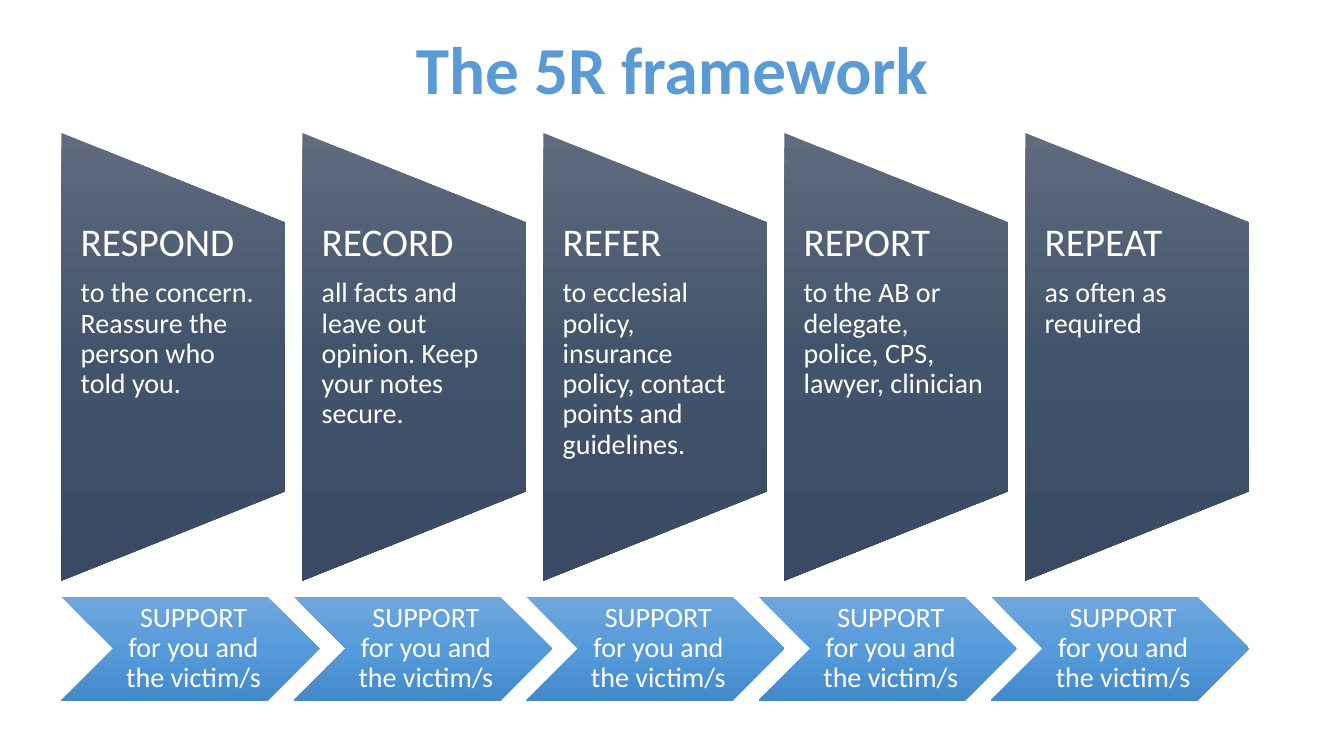
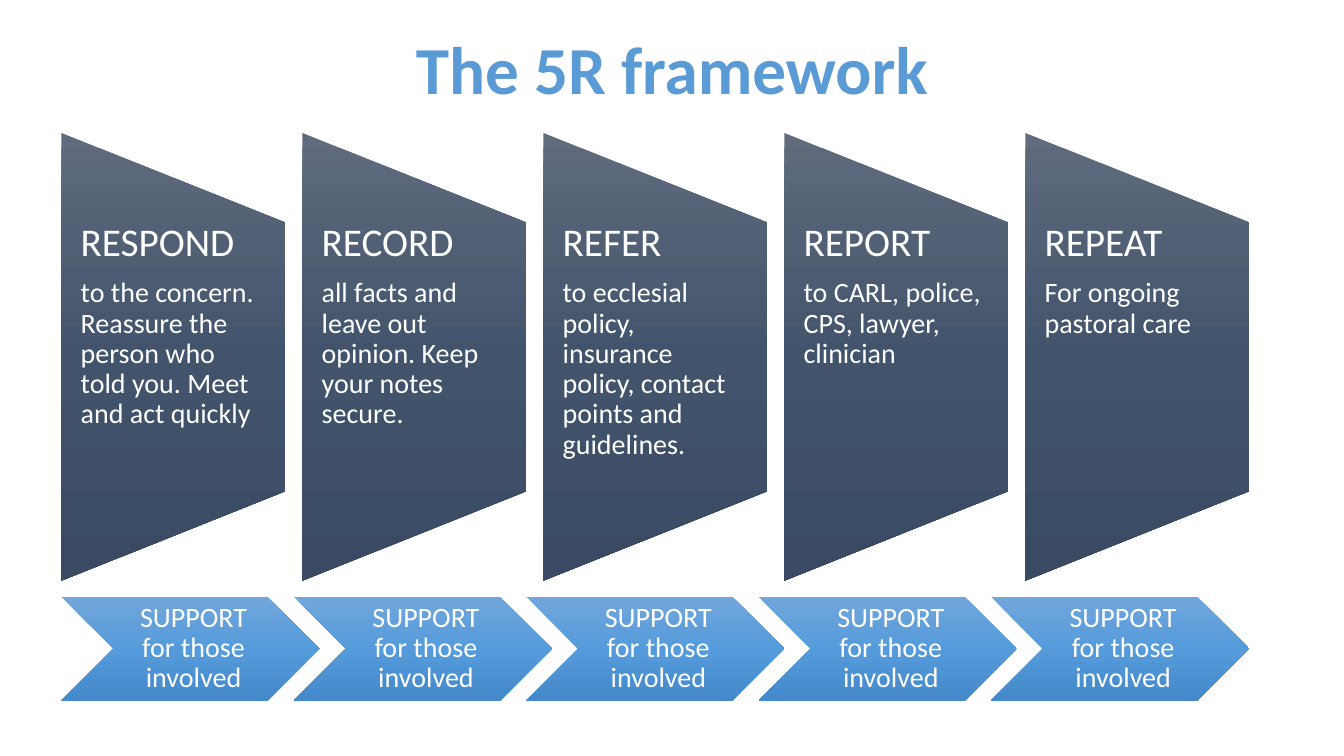
from lxml import etree
from pptx import Presentation
from pptx import util as u
from pptx.dml.color import RGBColor
from pptx.enum import shapes, text
from pptx.oxml.ns import qn


def color(value):
    return RGBColor.from_string(value)


class Deck:
    FONT = "Calibri"
    TITLE = "5B9BD5"
    TEXT = "FFFFFF"
    PANEL = ("606B7D", "42546C", "394A62")
    SUPPORT = ("71A6DB", "559BDB", "448ACA")
    LEFT = 0.61

    def __init__(self):
        self.prs = Presentation()
        self.prs.slide_width = u.Inches(13.33)
        self.prs.slide_height = u.Inches(7.5)
        self.slide = None

    def add_slide(self):
        self.slide = self.prs.slides.add_slide(self.prs.slide_layouts[6])

    def gradient(self, shape, stops):
        fill = shape.fill
        fill.gradient()
        grad = shape._element.spPr.find(qn("a:gradFill"))
        grad.set("rotWithShape", "0")
        stop_list = grad.find(qn("a:gsLst"))
        for old in list(stop_list):
            stop_list.remove(old)
        for i, value in enumerate(stops):
            stop = etree.SubElement(stop_list, qn("a:gs"), pos=str(i * 50000))
            etree.SubElement(stop, qn("a:srgbClr"), val=value)
        direction = grad.find(qn("a:lin"))
        direction.set("ang", "5400000")
        direction.set("scaled", "0")

    def shape(self, preset, left, top, width, height, stops):
        shape = self.slide.shapes.add_shape(
            preset, u.Inches(left), u.Inches(top), u.Inches(width), u.Inches(height))
        shape.shadow.inherit = False
        shape.line.fill.background()
        self.gradient(shape, stops)
        return shape

    def textbox(self, left, top, width, height):
        return self.slide.shapes.add_textbox(
            u.Inches(left), u.Inches(top), u.Inches(width), u.Inches(height)).text_frame

    def frame(self, frame, insets, anchor):
        frame.word_wrap = True
        frame.vertical_anchor = anchor
        (frame.margin_left, frame.margin_top,
         frame.margin_right, frame.margin_bottom) = map(u.Inches, insets)

    def run(self, paragraph, words, size, value, bold=False):
        run = paragraph.add_run()
        run.text = words
        run.font.name = self.FONT
        run.font.size = u.Pt(size)
        run.font.bold = bold
        run.font.color.rgb = color(value)

    def body_spacing(self, paragraph, align):
        paragraph.alignment = align
        paragraph.line_spacing = 0.9
        paragraph.space_after = u.Pt(7)
        after = paragraph._p.pPr.find(qn("a:spcAft"))
        after.remove(after[0])
        etree.SubElement(after, qn("a:spcPct"), val="35000")

    def title(self, words):
        frame = self.textbox(4, 0.17, 5.33, 0.97)
        frame.word_wrap = False
        frame.auto_size = text.MSO_AUTO_SIZE.SHAPE_TO_FIT_TEXT
        heading = frame.paragraphs[0]
        heading.alignment = text.PP_ALIGN.CENTER
        heading.line_spacing = 1.07
        heading.space_after = u.Pt(8)
        self.run(heading, words, 48, self.TITLE, bold=True)

    def panel(self, index, step, advice):
        width, height, top = 2.22, 4.44, 1.32
        left = self.LEFT + index * 2.39
        panel = self.shape(
            shapes.MSO_SHAPE.FLOWCHART_MANUAL_OPERATION,
            left + (width - height) / 2, top + (height - width) / 2,
            height, width, self.PANEL)
        panel.rotation = 270
        frame = self.textbox(left, 2.21, width, 2.67)
        self.frame(frame, (0.19, 0, 0.19, 0), text.MSO_ANCHOR.TOP)
        for paragraph, words, size in (
                (frame.paragraphs[0], step, 28), (frame.add_paragraph(), advice, 20)):
            self.body_spacing(paragraph, text.PP_ALIGN.LEFT)
            self.run(paragraph, words, size, self.TEXT)

    def support(self, index, audience):
        chevron = self.shape(
            shapes.MSO_SHAPE.CHEVRON, self.LEFT + index * 2.305, 5.92, 2.56, 1.03,
            self.SUPPORT)
        frame = chevron.text_frame
        self.frame(frame, (0.09, 0.03, 0.03, 0.03), text.MSO_ANCHOR.MIDDLE)
        paragraph = frame.paragraphs[0]
        self.body_spacing(paragraph, text.PP_ALIGN.CENTER)
        self.run(paragraph, "SUPPORT", 20, self.TEXT)
        paragraph.add_line_break()
        self.run(paragraph, audience, 20, self.TEXT)

    def framework(self, respond, report, repeat, audience):
        self.add_slide()
        self.title("The 5R framework")
        steps = (
            ("RESPOND", respond),
            ("RECORD", "all facts and leave out opinion. Keep your notes secure."),
            ("REFER", "to ecclesial policy, insurance policy, contact points and guidelines."),
            ("REPORT", report),
            ("REPEAT", repeat),
        )
        for index, (step, advice) in enumerate(steps):
            self.panel(index, step, advice)
        for index in range(len(steps)):
            self.support(index, audience)


def main():
    deck = Deck()
    reassure = "to the concern. Reassure the person who told you."
    deck.framework(
        reassure,
        "to the AB or delegate, police, CPS, lawyer, clinician",
        "as often as required",
        "for you and the victim/s")
    deck.framework(
        reassure + " Meet and act quickly",
        "to CARL, police, CPS, lawyer, clinician",
        "For ongoing pastoral care",
        "for those involved")
    deck.prs.save("out.pptx")


if __name__ == "__main__":
    main()
